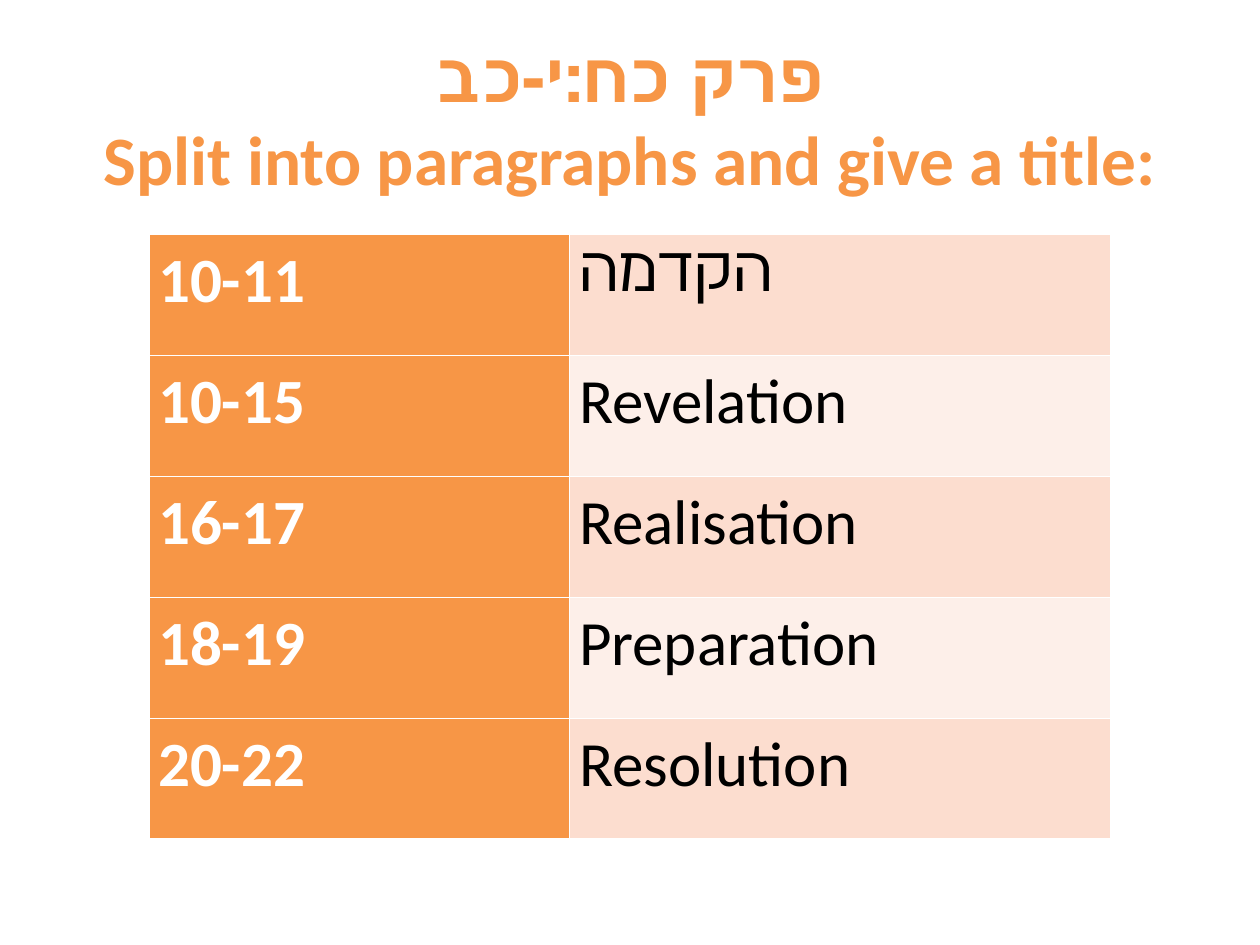
from pptx import Presentation
from pptx.dml.color import RGBColor
from pptx.enum.text import MSO_ANCHOR as Anchor, MSO_AUTO_SIZE as Fit, PP_ALIGN as Align
from pptx.oxml import parse_xml
from pptx.oxml.ns import nsdecls
from pptx.util import Pt

FONT = "Calibri"
ORANGE, WHITE, BLACK = "F79646", "FFFFFF", "000000"
BANDS = "FCDDCF", "FDEFE9"
TITLE = "פרק כח:י-כב\vSplit into paragraphs and give a title:"
ROWS = [
    ("10-11", "הקדמה"),
    ("10-15", "Revelation"),
    ("16-17", "Realisation"),
    ("18-19", "Preparation"),
    ("20-22", "Resolution"),
]


def color(code):
    """Turn a hex string into a colour."""
    return RGBColor.from_string(code)


def style(para, size, code, bold):
    """Format every run of a paragraph."""
    for run in para.runs:
        font = run.font
        font.name, font.size, font.bold = FONT, Pt(size), bold
        font.color.rgb = color(code)


def edge(cell, code, width):
    """Draw a line on all four sides of a cell."""
    props = cell._tc.get_or_add_tcPr()
    for spot, side in enumerate("LRTB"):
        props.insert(spot, parse_xml(
            f'<a:ln{side} {nsdecls("a")} w="{Pt(width)}"><a:solidFill>'
            f'<a:srgbClr val="{code}"/></a:solidFill></a:ln{side}>'))


def add_title(slide, left, top, width, height):
    """Place the two-line heading."""
    title = slide.shapes.title
    title.left, title.top = Pt(left), Pt(top)
    title.width, title.height = Pt(width), Pt(height)
    frame = title.text_frame
    frame.text = TITLE
    frame.word_wrap, frame.auto_size = True, Fit.NONE
    frame.vertical_anchor = Anchor.MIDDLE
    para = frame.paragraphs[0]
    para.alignment = Align.CENTER
    style(para, 39.6, ORANGE, True)


def fill_cell(cell, text, back, ink, bold):
    """Write and format one table cell."""
    cell.text = text
    cell.fill.solid()
    cell.fill.fore_color.rgb = color(back)
    cell.margin_left = cell.margin_right = Pt(5.4)
    cell.margin_top = cell.margin_bottom = 0
    cell.vertical_anchor = Anchor.TOP
    para = cell.text_frame.paragraphs[0]
    para.line_spacing = 1.1
    style(para, 36, ink, bold)
    edge(cell, WHITE, 1)


def add_grid(slide, left, top, width, height):
    """Place the table of verses and their titles."""
    table = slide.shapes.add_table(
        len(ROWS), 2, Pt(left), Pt(top), Pt(width), Pt(height)).table
    first = 240.5
    table.columns[0].width = Pt(first)
    table.columns[1].width = Pt(width - first)
    for row, (verse, name) in enumerate(ROWS):
        fill_cell(table.cell(row, 0), verse, ORANGE, WHITE, True)
        fill_cell(table.cell(row, 1), name, BANDS[row % 2], BLACK, False)


def main():
    """Build and save the slide."""
    deck = Presentation()
    deck.slide_width, deck.slide_height = Pt(720), Pt(540)
    slide = deck.slides.add_slide(deck.slide_layouts[5])
    add_title(slide, 36, 21.6, 648, 90)
    add_grid(slide, 85, 134, 550, 345.6)
    deck.save("out.pptx")


if __name__ == "__main__":
    main()
